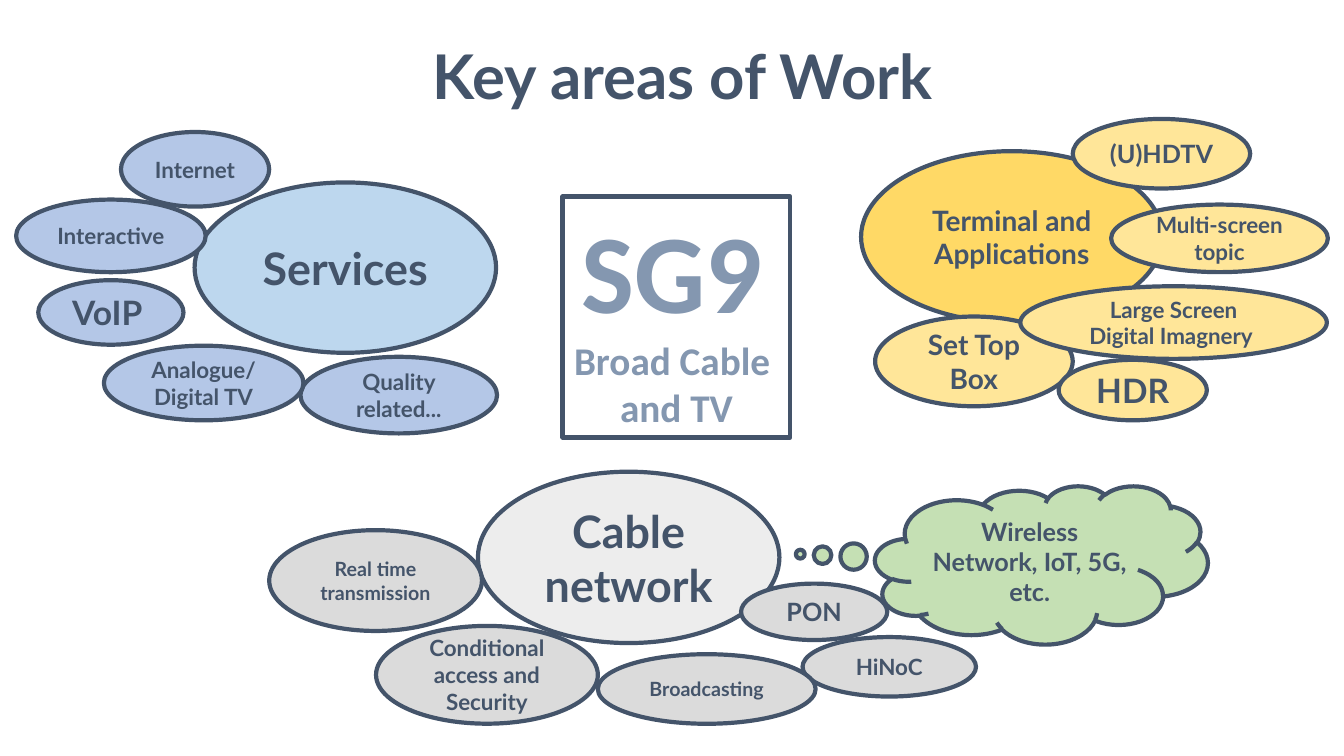
"""Build the slide on the key areas of work of SG9."""
from pptx import Presentation, util as u
from pptx.dml.color import RGBColor
from pptx.enum import shapes, text

INK, MUTED = "44546A", "8497B0"

AREAS = [
    ("BDD7EE", ("Services", 32, 1.93, 1.81, 2.99, 1.69), "B4C7E7", [
        ("Quality related...", 16, 2.98, 3.54, 1.95, 0.76),
        ("VoIP ", 24, 0.38, 2.78, 1.44, 0.64),
        ("Interactive", 16, 0.16, 1.98, 1.88, 0.72),
        ("Internet", 16, 1.2, 1.31, 1.47, 0.74),
        ("Analogue/Digital TV", 16, 1.03, 3.43, 1.98, 0.74),
    ]),
    ("FFD966", ("Terminal and Applications", 20, 8.54, 1.5, 2.99, 1.7), "FFE699", [
        ("(U)HDTV", 18, 10.64, 1.18, 1.76, 0.69),
        ("Set Top Box", 20, 8.68, 3.14, 1.96, 0.89),
        ("Multi-screen topic", 16, 11.02, 2.03, 2.15, 0.67),
        ("Large Screen Digital Imagnery\u00a0", 16, 10.12, 2.84, 3.04, 0.72),
        ("HDR", 24, 10.5, 3.57, 1.47, 0.6),
    ]),
    ("EDEDED", ("Cable network", 32, 4.74, 4.68, 2.99, 1.7), "DBDBDB", [
        ("HiNoC", 16, 7.96, 6.32, 1.72, 0.59),
        ("Real time transmission", 14, 2.67, 5.26, 2.11, 1),
        ("PON", 18, 7.35, 5.79, 1.45, 0.56),
        ("Broadcasting", 14, 5.93, 6.49, 2.16, 0.69),
        ("Conditional access and Security", 16, 3.73, 6.21, 2.2, 0.97),
    ]),
]


def rgb(value):
    """Return the colour for a hex string."""
    return RGBColor.from_string(value)


def style(p, size, name="Lato", color=INK):
    """Centre a paragraph and set its bold font."""
    p.alignment = text.PP_ALIGN.CENTER
    p.font.size, p.font.name, p.font.bold = u.Pt(size), name, True
    p.font.color.rgb = rgb(color)


def outline(sp):
    """Give a shape the common dark outline."""
    sp.line.color.rgb = rgb(INK)
    sp.line.width = u.Pt(3)


def add_title(s, words):
    """Place the slide title."""
    sp = s.shapes.title
    sp.left, sp.top = u.Inches(1.04), u.Inches(0.35)
    sp.width, sp.height = u.Inches(11.46), u.Inches(0.79)
    tf = sp.text_frame
    tf.text = words
    tf.margin_left = tf.margin_right = u.Inches(0.05)
    tf.margin_top = tf.margin_bottom = u.Inches(0.02)
    style(tf.paragraphs[0], 44)


def add_bubble(s, fill, words, size, *box, kind=shapes.MSO_SHAPE.OVAL):
    """Add a filled, outlined shape with a centred label."""
    sp = s.shapes.add_shape(kind, *map(u.Inches, box))
    sp.shadow.inherit = False
    sp.fill.solid()
    sp.fill.fore_color.rgb = rgb(fill)
    outline(sp)
    tf = sp.text_frame
    tf.word_wrap = True
    tf.vertical_anchor = text.MSO_ANCHOR.MIDDLE
    tf.text = words
    style(tf.paragraphs[0], size)
    return sp


def add_area(s, main_fill, hub, topic_fill, topics):
    """Add an area of work with its topics around it."""
    add_bubble(s, main_fill, *hub)
    for topic in topics:
        add_bubble(s, topic_fill, *topic)


def add_group_box(s):
    """Add the framed name of the study group."""
    sp = s.shapes.add_textbox(*map(u.Inches, (5.58, 1.95, 2.26, 2.39)))
    outline(sp)
    tf = sp.text_frame
    tf.word_wrap = False
    tf.auto_size = text.MSO_AUTO_SIZE.SHAPE_TO_FIT_TEXT
    tf.text = "\nBroad Cable \nand TV"
    for p in tf.paragraphs:
        style(p, 28, "Calibri", MUTED)
    heading = tf.paragraphs[0]
    for words, size in (("SG9", 80), (" ", 28)):
        r = heading.add_run()
        r.text, r.font.size = words, u.Pt(size)


def main():
    """Build and save the presentation."""
    prs = Presentation()
    prs.slide_width, prs.slide_height = u.Inches(13.33), u.Inches(7.5)
    s = prs.slides.add_slide(prs.slide_layouts[5])
    add_title(s, "Key areas of Work")
    for area in AREAS:
        add_area(s, *area)
    cloud = add_bubble(s, "C5E0B4", "Wireless Network, IoT, 5G, etc.", 18,
                       8.68, 4.82, 3.3, 1.57,
                       kind=shapes.MSO_SHAPE.CLOUD_CALLOUT)
    cloud.adjustments[0], cloud.adjustments[1] = -0.725, -0.068
    add_group_box(s)
    prs.save("out.pptx")


if __name__ == "__main__":
    main()
